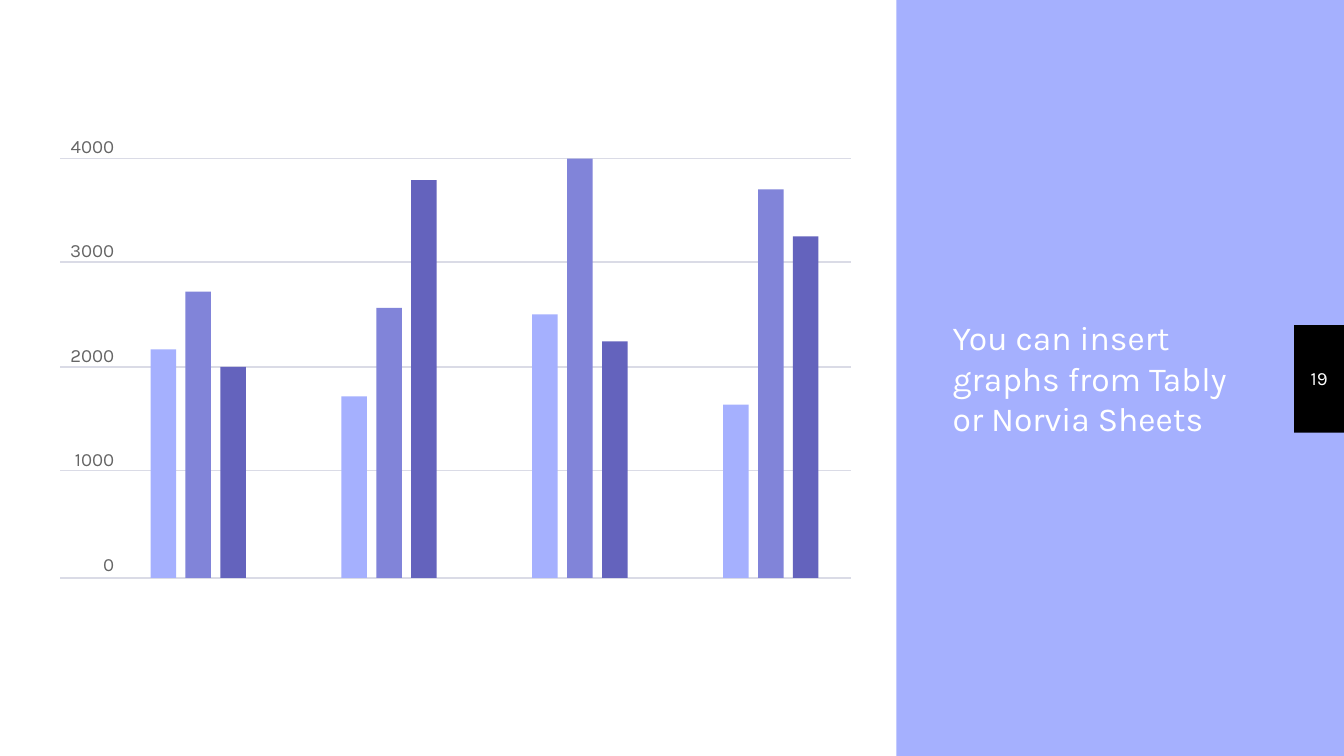
from pptx import Presentation
from pptx.dml.color import RGBColor
from pptx.enum.shapes import MSO_CONNECTOR, MSO_SHAPE
from pptx.enum.text import MSO_ANCHOR, PP_ALIGN
from pptx.util import Inches, Pt
from lxml import etree

RECT = MSO_SHAPE.RECTANGLE
LINE = MSO_CONNECTOR.STRAIGHT
MID, TOP = MSO_ANCHOR.MIDDLE, MSO_ANCHOR.TOP
LEFT, MIDDLE, RIGHT = PP_ALIGN.LEFT, PP_ALIGN.CENTER, PP_ALIGN.RIGHT
NS = "http://schemas.openxmlformats.org/drawingml/2006/main"

deck = Presentation()
deck.slide_width = Inches(10)
deck.slide_height = deck.slide_width * 9 // 16
slide = deck.slides.add_slide(deck.slide_layouts[6])
shapes = slide.shapes


def paint(fill, color):
    fill.solid()
    fill.fore_color.rgb = RGBColor.from_string(color)


def write(box, lines, size, color, align, anchor, inset, before):
    shape = shapes.add_textbox(*[Inches(n) for n in box])
    frame = shape.text_frame
    frame.word_wrap = True
    frame.vertical_anchor = anchor
    frame.margin_left = frame.margin_right = Inches(inset)
    frame.margin_top = frame.margin_bottom = Inches(inset)
    for i, line in enumerate(lines):
        para = frame.paragraphs[0] if i == 0 else frame.add_paragraph()
        para.alignment = align
        para.space_before = Pt(before if i else 0)
        run = para.add_run()
        run.text = line
        run.font.name = "Karla"
        run.font.size = Pt(size)
        paint(run.font.fill, color)


paint(slide.background.fill, "A5B0FE")

base = 4.3
blocks = [
    (9.63, 2.42, 0.37, 0.8, "000000"),
    (0, 0, 6.67, deck.slide_height.inches, "FFFFFF"),
]
tints = ["A5B0FE", "8184D9", "6463BD"]
groups = [
    (1.7, 2.13, 1.57),
    (1.35, 2.01, 2.96),
    (1.96, 3.12, 1.76),
    (1.29, 2.89, 2.54),
]
bars = [
    (1.12 + 1.42 * g + 0.26 * b, base - high, 0.19, high, tints[b])
    for g, group in enumerate(groups)
    for b, high in enumerate(group)
]

for i, (*box, color) in enumerate(blocks + bars):
    if i == len(blocks):
        for y in (1.18, 1.95, 2.73, 3.5, base):
            rule = shapes.add_connector(
                LINE, Inches(0.45), Inches(y), Inches(6.33), Inches(y))
            paint(rule.line.fill, "DADBE6")
            rule.line.width = Pt(0.75)
            etree.SubElement(rule._element.spPr, f"{{{NS}}}effectLst")
    block = shapes.add_shape(RECT, *[Inches(n) for n in box])
    block.shadow.inherit = False
    block.line.fill.background()
    paint(block.fill, color)

write((6.99, 0.48, 2.32, 4.66),
      ["You can insert graphs from Tably or Norvia Sheets"],
      18, "FFFFFF", LEFT, MID, 0.1, 0)
write((9.63, 2.41, 0.37, 0.8), ["19"], 10, "FFFFFF", MIDDLE, MID, 0.1, 0)
scale = [str(n) for n in range(4000, -1, -1000)]
write((0.45, 1, 0.4, 3.31), scale, 10, "666666", RIGHT, TOP, 0, 44)

deck.save("out.pptx")
